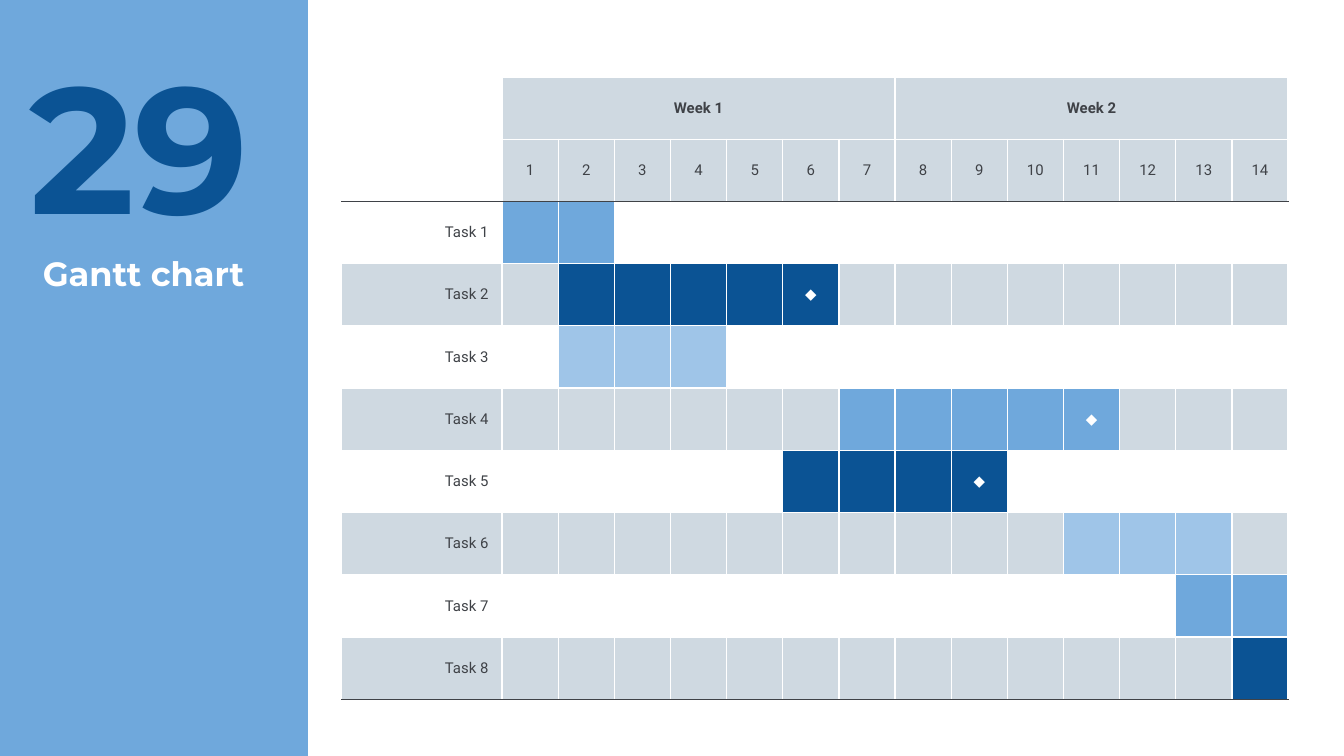
from lxml import etree
from pptx import Presentation
from pptx import util as u
from pptx.dml.color import RGBColor
from pptx.enum import shapes, text
from pptx.oxml.ns import qn

COLORS = {
    "white": "FFFFFF",
    "ink": "3F4247",
    "grey": "CFD9E1",
    "dark": "0B5394",
    "mid": "6FA8DC",
    "light": "9FC5E8",
}

DAYS = 14
DAYS_PER_WEEK = 7
HEADER_ROWS = 2
LABEL_WIDTH, DAY_WIDTH, ROW_HEIGHT = 86, 30.1, 33.35

# First day, last day, bar colour, milestone on the last day
TASKS = [
    (1, 2, "mid", False),
    (2, 6, "dark", True),
    (2, 4, "light", False),
    (7, 11, "mid", True),
    (6, 9, "dark", True),
    (11, 13, "light", False),
    (13, 14, "mid", False),
    (14, 14, "dark", False),
]


def rgb(name):
    return RGBColor.from_string(COLORS[name])


def write(frame, words, font, size, color, bold=False, align=text.PP_ALIGN.LEFT):
    frame.text = words
    para = frame.paragraphs[0]
    para.alignment = align
    for span in para.runs:
        span.font.name = font
        span.font.size = u.Pt(size)
        span.font.bold = bold
        span.font.color.rgb = rgb(color)


def place(box, left, top, width, height):
    box.left, box.top = u.Pt(left), u.Pt(top)
    box.width, box.height = u.Pt(width), u.Pt(height)


def add_heading(box, words, size, color):
    frame = box.text_frame
    frame.word_wrap = True
    frame.auto_size = text.MSO_AUTO_SIZE.NONE
    frame.vertical_anchor = text.MSO_ANCHOR.TOP
    frame.margin_left = frame.margin_right = u.Pt(7.2)
    frame.margin_top = frame.margin_bottom = u.Pt(7.2)
    write(frame, words, "Montserrat", size, color, bold=True)


def add_panel(page):
    panel = page.shapes.add_shape(
        shapes.MSO_SHAPE.RECTANGLE, u.Pt(165), u.Pt(0), u.Pt(555), u.Pt(405))
    panel.shadow.inherit = False
    panel.fill.solid()
    panel.fill.fore_color.rgb = rgb("white")
    panel.line.fill.background()


def set_borders(cell, top, bottom):
    properties = cell._tc.get_or_add_tcPr()
    sides = {"L": "white", "R": "white", "T": top, "B": bottom}
    for index, (side, color) in enumerate(sides.items()):
        line = etree.Element(qn("a:ln" + side), w=str(u.Pt(0.75)))
        fill = etree.SubElement(line, qn("a:solidFill"))
        etree.SubElement(fill, qn("a:srgbClr"), val=COLORS[color])
        properties.insert(index, line)


def style_cell(cell, fill, top="white", bottom="white"):
    cell.vertical_anchor = text.MSO_ANCHOR.MIDDLE
    if fill:
        cell.fill.solid()
        cell.fill.fore_color.rgb = rgb(fill)
    else:
        cell.fill.background()
    set_borders(cell, top, bottom)


def write_cell(cell, words, color="ink", bold=False, align=text.PP_ALIGN.CENTER):
    write(cell.text_frame, words, "Roboto", 8, color, bold, align)


def add_grid(page):
    rows = HEADER_ROWS + len(TASKS)
    frame = page.shapes.add_table(
        rows, DAYS + 1, u.Pt(183), u.Pt(41.25),
        u.Pt(LABEL_WIDTH + DAYS * DAY_WIDTH), u.Pt(rows * ROW_HEIGHT))
    grid = frame.table
    grid.first_row = grid.horz_banding = False
    for index, column in enumerate(grid.columns):
        column.width = u.Pt(DAY_WIDTH if index else LABEL_WIDTH)
    for row in grid.rows:
        row.height = u.Pt(ROW_HEIGHT)
    return grid


def fill_header(grid):
    for day in range(DAYS + 1):
        fill = "grey" if day else None
        style_cell(grid.cell(0, day), fill)
        style_cell(grid.cell(1, day), fill, bottom="ink")
        if day:
            write_cell(grid.cell(1, day), str(day))
    for week, first in enumerate(range(1, DAYS + 1, DAYS_PER_WEEK), start=1):
        cell = grid.cell(0, first)
        cell.merge(grid.cell(0, first + DAYS_PER_WEEK - 1))
        write_cell(cell, f"Week {week}", bold=True)


def fill_tasks(grid):
    for number, (first, last, color, milestone) in enumerate(TASKS, start=1):
        row = HEADER_ROWS + number - 1
        band = "grey" if number % 2 == 0 else None
        top = "ink" if number == 1 else "white"
        bottom = "ink" if number == len(TASKS) else "white"
        for day in range(DAYS + 1):
            fill = color if first <= day <= last else band
            style_cell(grid.cell(row, day), fill, top, bottom)
        write_cell(grid.cell(row, 0), f"Task {number}", align=text.PP_ALIGN.RIGHT)
        if milestone:
            write_cell(grid.cell(row, last), "◆", color="white")


def main():
    deck = Presentation()
    deck.slide_width, deck.slide_height = u.Pt(720), u.Pt(405)
    page = deck.slides.add_slide(deck.slide_layouts[5])

    # Blue background with a white panel
    page.background.fill.solid()
    page.background.fill.fore_color.rgb = rgb("mid")
    add_panel(page)

    # Title and large number
    title = page.shapes.title
    place(title, 15.75, 128.25, 134.75, 67.5)
    add_heading(title, "Gantt chart", 18, "white")
    number = page.shapes.add_textbox(u.Pt(8.5), u.Pt(11.5), u.Pt(142.5), u.Pt(98.5))
    add_heading(number, "29", 96, "dark")

    # Gantt table
    grid = add_grid(page)
    fill_header(grid)
    fill_tasks(grid)

    deck.save("out.pptx")


if __name__ == "__main__":
    main()
